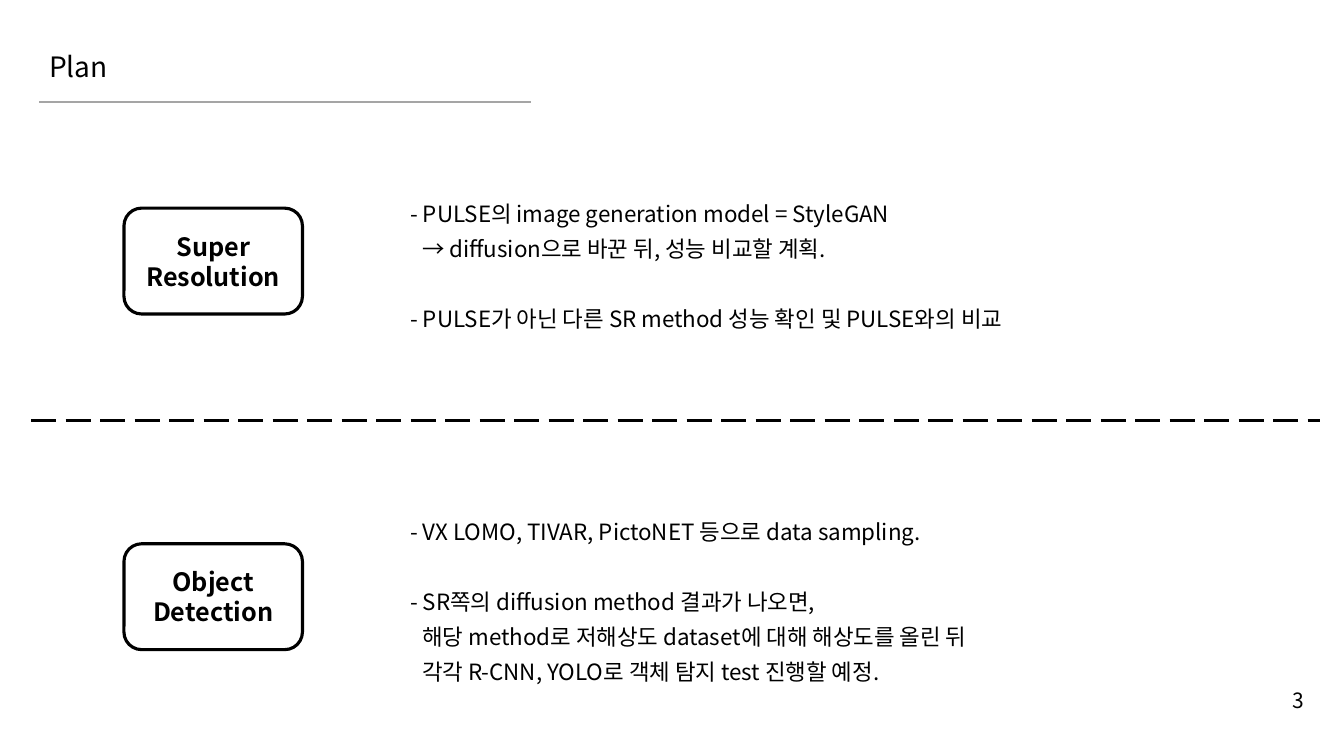
from dataclasses import dataclass

from lxml import etree
from pptx import Presentation
from pptx.dml.color import RGBColor
from pptx.enum import dml, shapes, text
from pptx.oxml import ns
from pptx.util import Inches, Pt

FONT = "Noto Sans CJK KR"
BLACK = RGBColor(0x00, 0x00, 0x00)
WHITE = RGBColor(0xFF, 0xFF, 0xFF)
GRAY = RGBColor(0xA5, 0xA5, 0xA5)

LABEL_LEFT, LABEL_WIDTH, LABEL_HEIGHT = 1.23, 1.77, 1.05
NOTE_LEFT, NOTE_WIDTH = 3.97, 8.76
NOTE_INDENT = Inches(0.12)
NOTE_GAP = Pt(24.8)


@dataclass
class Topic:
    label: str
    center_y: float
    note_height: float
    notes: list[list[str]]  # each item: a first line, then its indented lines


TOPICS = [
    Topic("Super\nResolution", 2.59, 1.46, [
        ["- PULSE의 image generation model = StyleGAN",
         "→ diffusion으로 바꾼 뒤, 성능 비교할 계획."],
        ["- PULSE가 아닌 다른 SR method 성능 확인 및 PULSE와의 비교"],
    ]),
    Topic("Object\nDetection", 5.92, 1.81, [
        ["- VX LOMO, TIVAR, PictoNET 등으로 data sampling."],
        ["- SR쪽의 diffusion method 결과가 나오면,",
         "해당 method로 저해상도 dataset에 대해 해상도를 올린 뒤",
         "각각 R-CNN, YOLO로 객체 탐지 test 진행할 예정."],
    ]),
]


def format_text(tf, size: float, bold: bool = False, align=None) -> None:
    for p in tf.paragraphs:
        p.alignment = align
        for r in p.runs:
            r.font.size = Pt(size)
            r.font.bold = bold
            r.font.name = FONT
            r.font.color.rgb = BLACK
            ea = etree.SubElement(r.font._element, ns.qn("a:ea"))
            ea.set("typeface", FONT)


def add_text(s, content: str, left: float, top: float, width: float,
             height: float, size: float, align=None):
    tf = s.shapes.add_textbox(Inches(left), Inches(top),
                              Inches(width), Inches(height)).text_frame
    tf.word_wrap = True
    tf.text = content
    format_text(tf, size, align=align)
    return tf


def add_rule(s, left: float, right: float, y: float, color: RGBColor,
             width: float, dash=None) -> None:
    """Draw a horizontal line."""
    line = s.shapes.add_connector(shapes.MSO_CONNECTOR.STRAIGHT, Inches(left),
                                  Inches(y), Inches(right), Inches(y))
    line.line.color.rgb = color
    line.line.width = Pt(width)
    if dash is not None:
        line.line.dash_style = dash
    etree.SubElement(line._element.spPr, ns.qn("a:effectLst"))


def add_label(s, topic: Topic) -> None:
    sp = s.shapes.add_shape(
        shapes.MSO_SHAPE.ROUNDED_RECTANGLE, Inches(LABEL_LEFT),
        Inches(topic.center_y - LABEL_HEIGHT / 2),
        Inches(LABEL_WIDTH), Inches(LABEL_HEIGHT))
    sp.shadow.inherit = False
    sp.fill.solid()
    sp.fill.fore_color.rgb = WHITE
    sp.line.color.rgb = BLACK
    sp.line.width = Pt(2.25)
    tf = sp.text_frame
    tf.text = topic.label
    tf.vertical_anchor = text.MSO_ANCHOR.MIDDLE
    format_text(tf, 18, bold=True, align=text.PP_ALIGN.CENTER)


def add_notes(s, topic: Topic) -> None:
    content = "\n".join(line for note in topic.notes for line in note)
    tf = add_text(s, content, NOTE_LEFT, topic.center_y - topic.note_height / 2,
                  NOTE_WIDTH, topic.note_height, 16)
    tf.auto_size = text.MSO_AUTO_SIZE.SHAPE_TO_FIT_TEXT
    paragraphs = iter(tf.paragraphs)
    for n, note in enumerate(topic.notes):
        for i in range(len(note)):
            p = next(paragraphs)
            p.line_spacing = 1.3
            if i > 0:
                p._p.get_or_add_pPr().set("marL", str(NOTE_INDENT))
            elif n > 0:
                p.space_before = NOTE_GAP


def main() -> None:
    prs = Presentation()
    prs.slide_width, prs.slide_height = Inches(13.33), Inches(7.5)
    s = prs.slides.add_slide(prs.slide_layouts[6])

    title = add_text(s, "Plan", 0.39, 0.44, 12.56, 0.44, 20)
    title.auto_size = text.MSO_AUTO_SIZE.SHAPE_TO_FIT_TEXT
    add_rule(s, 0.39, 5.27, 1.01, GRAY, 1.5)
    number = add_text(s, "3", 12.44, 6.75, 0.59, 0.4, 15, text.PP_ALIGN.RIGHT)
    number.vertical_anchor = text.MSO_ANCHOR.MIDDLE

    add_rule(s, 0.31, 13.09, 4.17, BLACK, 2.25, dml.MSO_LINE.LONG_DASH)
    for topic in TOPICS:
        add_label(s, topic)
        add_notes(s, topic)

    prs.save("out.pptx")


if __name__ == "__main__":
    main()
